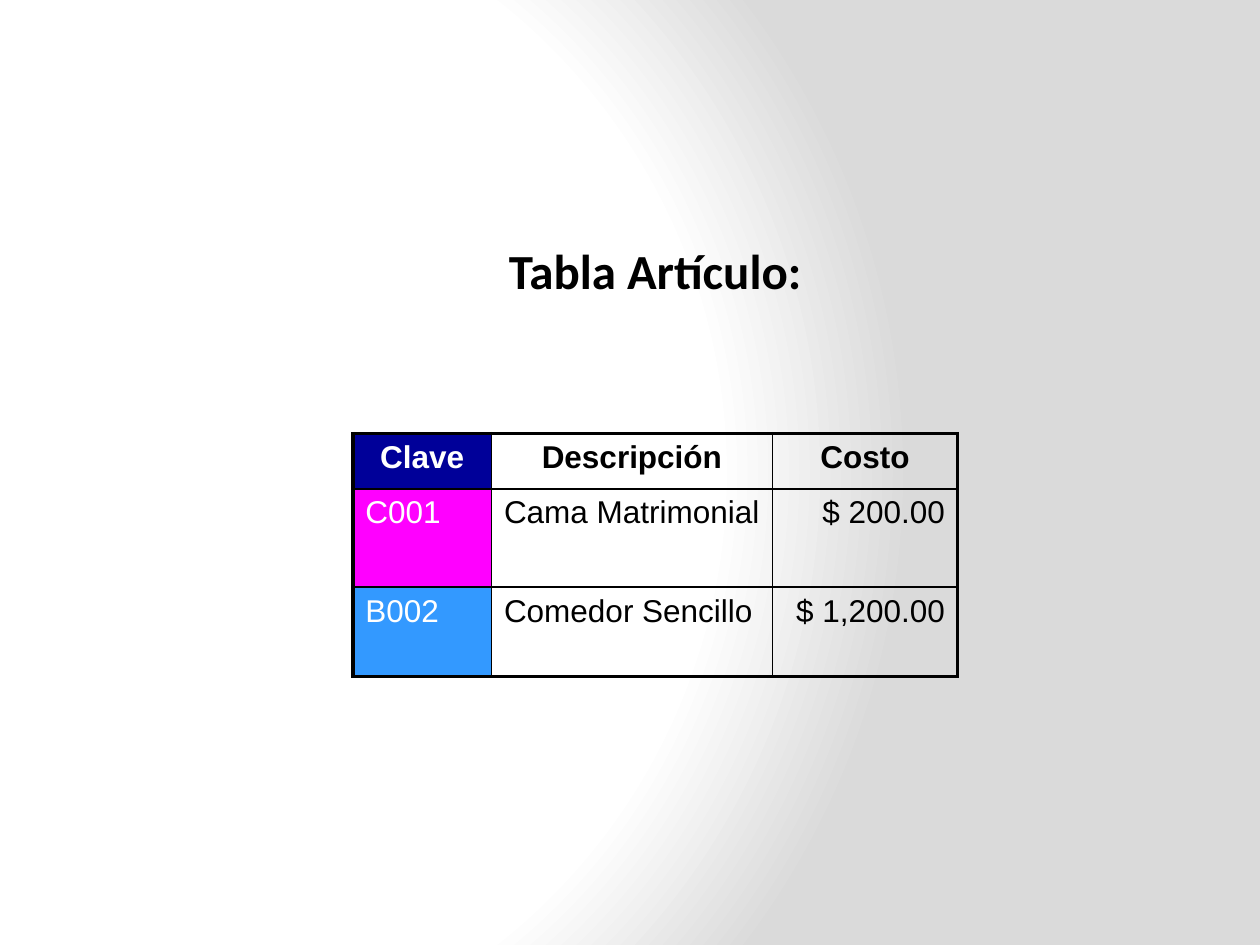
from pptx import Presentation
from pptx.dml.color import RGBColor
from pptx.enum.text import MSO_ANCHOR, PP_ALIGN
from pptx.oxml import parse_xml
from pptx.oxml.ns import nsdecls
from pptx.util import Inches, Pt

COLORS = {
    "ink": "000000",
    "paper": "FFFFFF",
    "shade": "DADADA",
    "header": "000099",
    "magenta": "FF00FF",
    "blue": "3399FF",
}
OUTER, INNER = 2.25, 1


class SlideBuilder:
    """Holds the style and the current slide."""

    title_font, table_font = "Calibri", "Arial"
    title_size, table_size = Pt(28), Pt(18)

    def __init__(self, slide):
        self.slide = slide

    def background(self, stops):
        marks = "".join(
            f'<a:gs pos="{pos * 1000}"><a:srgbClr val="{COLORS[color]}"/></a:gs>'
            for pos, color in stops)
        self.slide.element.cSld.insert(0, parse_xml(
            f'<p:bg {nsdecls("p", "a")}><p:bgPr><a:gradFill rotWithShape="1">'
            f'<a:gsLst>{marks}</a:gsLst><a:path path="circle">'
            '<a:fillToRect l="20000" t="50000" r="100000" b="50000"/></a:path>'
            '</a:gradFill><a:effectLst/></p:bgPr></p:bg>'))

    def run(self, paragraph, text, font, size, color, bold):
        run = paragraph.add_run()
        run.text = text
        run.font.name, run.font.size, run.font.bold = font, size, bold
        run.font.color.rgb = RGBColor.from_string(COLORS[color])

    def heading(self, text, left, top, width, height):
        heading = self.slide.placeholders[1]
        heading.left, heading.top = Inches(left), Inches(top)
        heading.width, heading.height = Inches(width), Inches(height)
        heading.text_frame.vertical_anchor = MSO_ANCHOR.TOP
        paragraph = heading.text_frame.paragraphs[0]
        paragraph.alignment = PP_ALIGN.CENTER
        properties = paragraph._p.get_or_add_pPr()
        properties.set("marL", str(Inches(0.38)))
        properties.set("indent", str(Inches(-0.25)))
        properties.append(parse_xml(f'<a:buNone {nsdecls("a")}/>'))
        self.run(paragraph, text, self.title_font, self.title_size, "ink", True)

    def borders(self, cell, widths):
        # Border lines come before the fill in the cell properties
        properties = cell._tc.get_or_add_tcPr()
        for position, (side, width) in enumerate(widths.items()):
            properties.insert(position, parse_xml(
                f'<a:{side} {nsdecls("a")} w="{Pt(width)}"><a:solidFill>'
                f'<a:srgbClr val="{COLORS["ink"]}"/></a:solidFill></a:{side}>'))

    def cell(self, cell, text, align, fill, bold):
        if fill:
            cell.fill.solid()
            cell.fill.fore_color.rgb = RGBColor.from_string(COLORS[fill])
        else:
            cell.fill.background()
        paragraph = cell.text_frame.paragraphs[0]
        paragraph.alignment = align
        paragraph._p.get_or_add_pPr().append(parse_xml(
            f'<a:spcBef {nsdecls("a")}><a:spcPct val="20000"/></a:spcBef>'))
        self.run(paragraph, text, self.table_font, self.table_size,
                 "paper" if fill else "ink", bold)

    def table(self, records, left, top, widths, heights, key_fills, aligns):
        table = self.slide.shapes.add_table(
            len(heights), len(widths), Inches(left), Inches(top),
            Inches(sum(widths)), Inches(sum(heights))).table
        table.first_row = table.horz_banding = False
        for column, width in zip(table.columns, widths):
            column.width = Inches(width)
        for row, height in zip(table.rows, heights):
            row.height = Inches(height)
        last_row, last_col = len(heights) - 1, len(widths) - 1
        for r, record in enumerate(records):
            for c, text in enumerate(record):
                cell = table.cell(r, c)
                self.cell(cell, text,
                          aligns[c] if r else PP_ALIGN.CENTER,
                          None if c else key_fills[r], r == 0)
                self.borders(cell, {
                    "lnL": INNER if c else OUTER,
                    "lnR": OUTER if c == last_col else INNER,
                    "lnT": INNER if r else OUTER,
                    "lnB": OUTER if r == last_row else INNER,
                })


def main():
    deck = Presentation()
    deck.slide_width, deck.slide_height = Inches(10), Inches(7.5)
    slide = deck.slides.add_slide(deck.slide_layouts[1])
    unused_title = slide.shapes.title.element
    unused_title.getparent().remove(unused_title)
    builder = SlideBuilder(slide)

    # Background glow
    builder.background([(0, "paper"), (75, "paper"), (100, "shade")])

    # Heading
    builder.heading("Tabla Artículo:", 2.67, 1.86, 4.93, 1.14)

    # Article table
    articles = [
        ("Clave", "Descripción", "Costo"),
        ("C001", "Cama Matrimonial", "$ 200.00"),
        ("B002", "Comedor Sencillo", "$ 1,200.00"),
    ]
    builder.table(articles, 2.8, 3.44,
                  widths=[1.1, 2.23, 1.47], heights=[0.44, 0.78, 0.71],
                  key_fills=["header", "magenta", "blue"],
                  aligns=[PP_ALIGN.LEFT, PP_ALIGN.LEFT, PP_ALIGN.RIGHT])

    deck.save("out.pptx")


if __name__ == "__main__":
    main()
